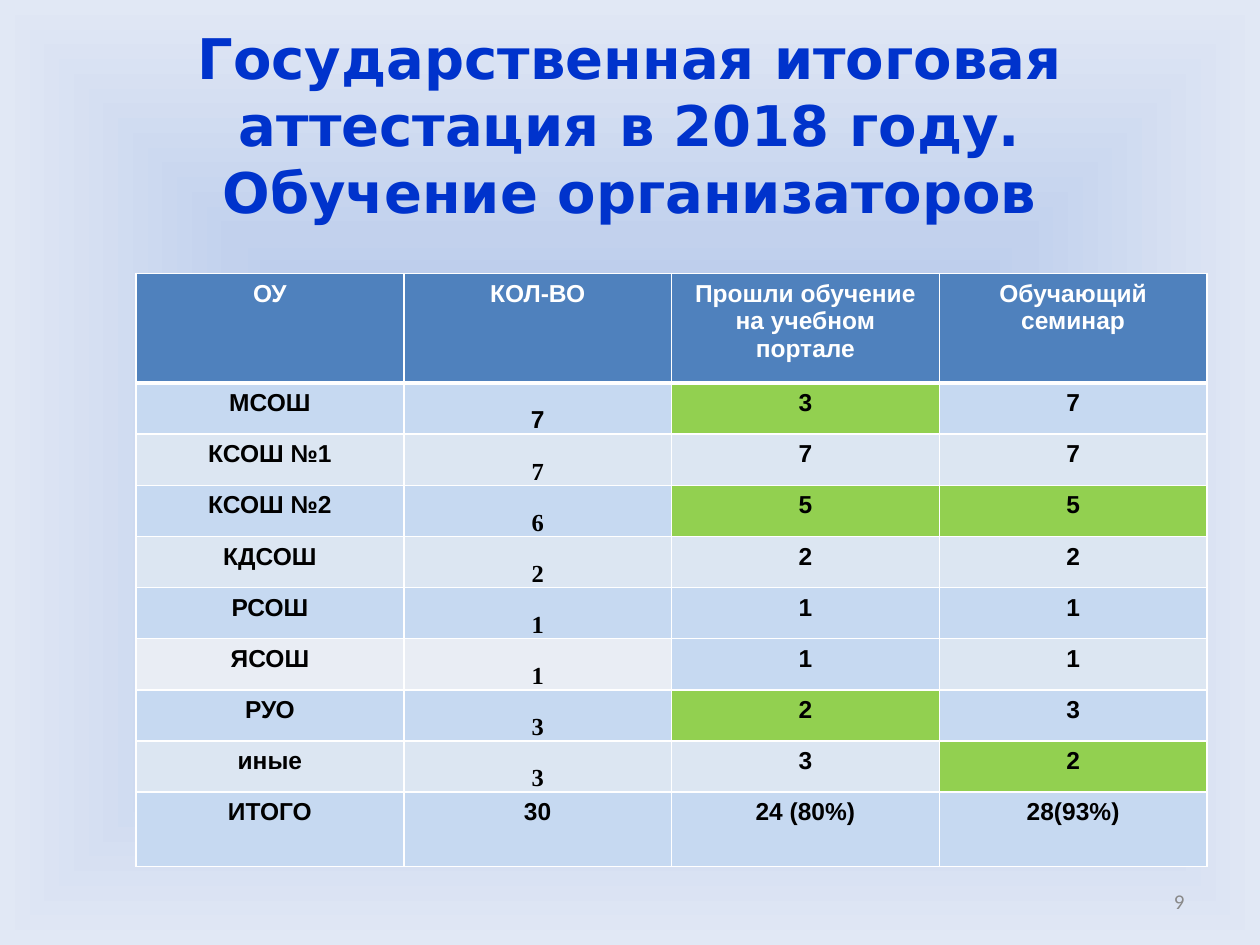
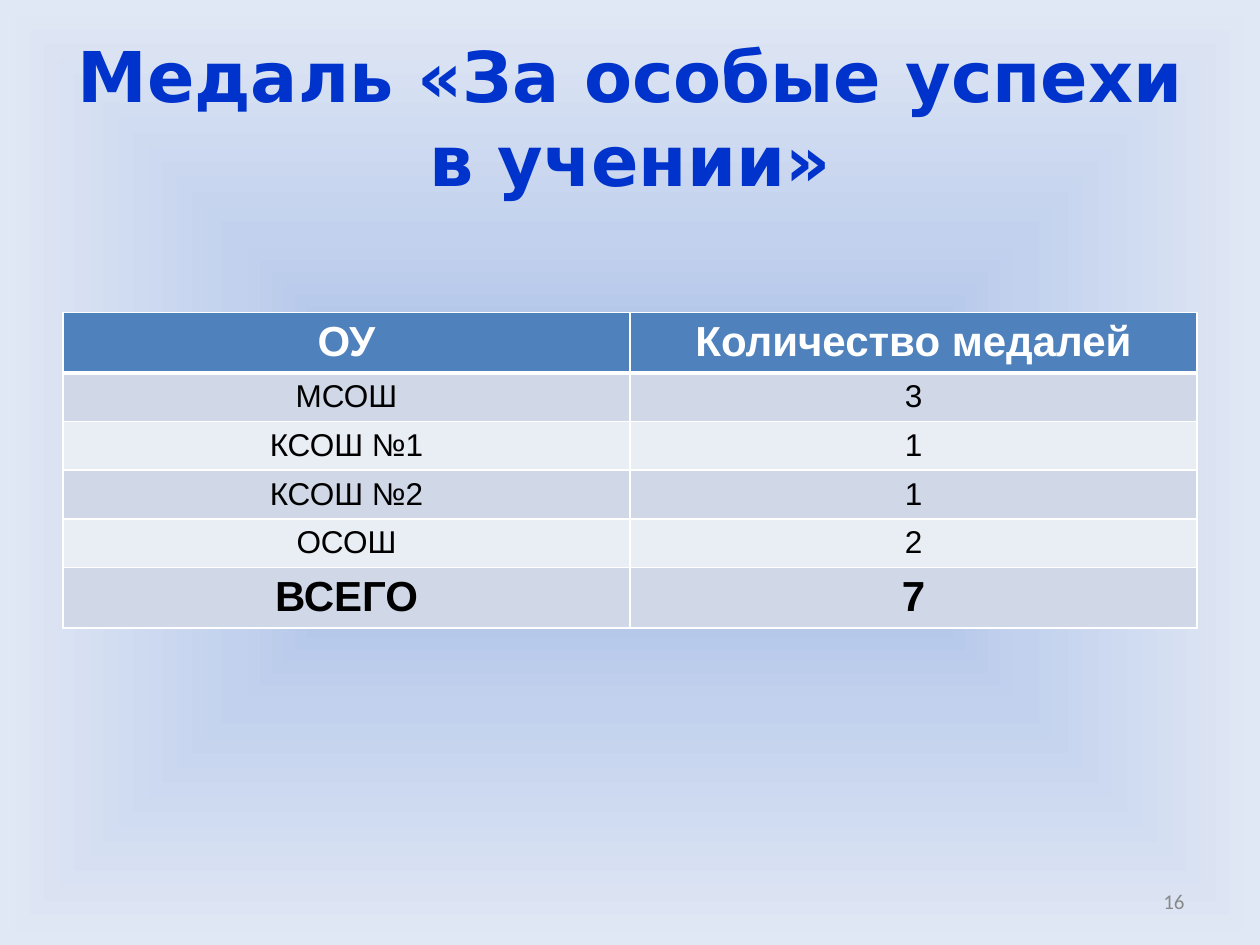
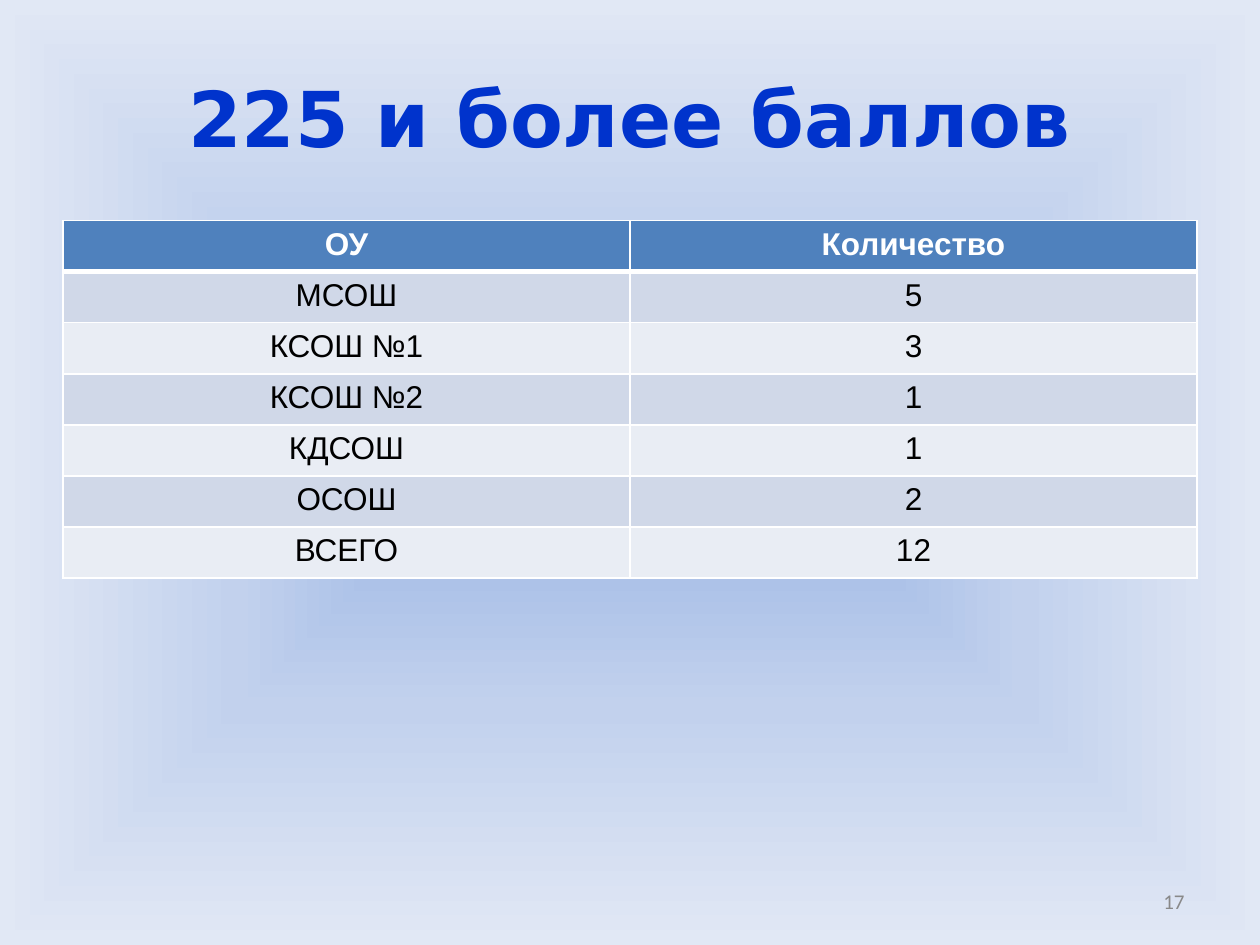
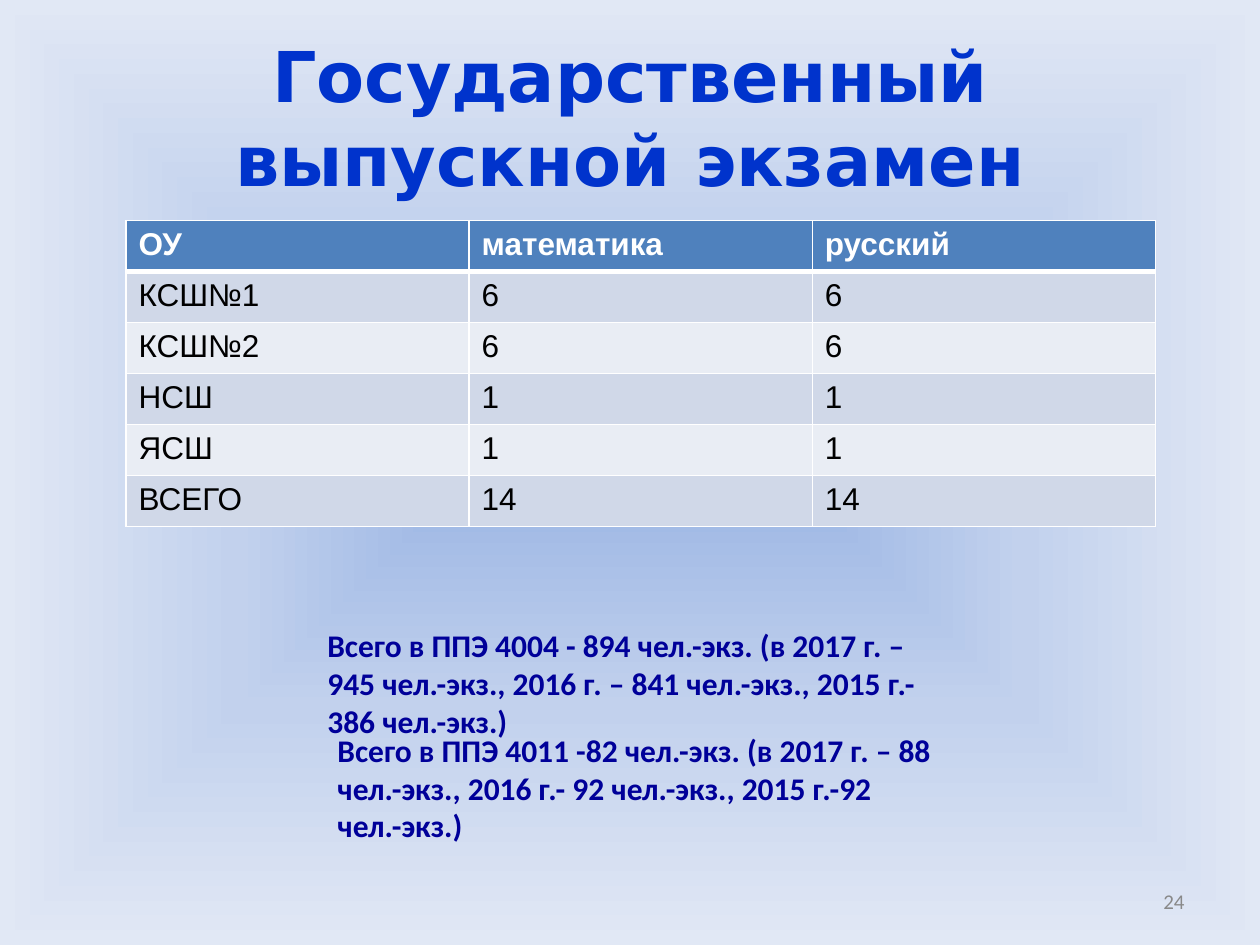
from lxml import etree
from pptx import Presentation
from pptx.dml.color import RGBColor
from pptx.enum.text import MSO_ANCHOR, MSO_AUTO_SIZE, PP_ALIGN
from pptx.oxml import parse_xml
from pptx.oxml.ns import qn
from pptx.util import Inches, Pt

LEFT, CENTER, RIGHT = PP_ALIGN.LEFT, PP_ALIGN.CENTER, PP_ALIGN.RIGHT
TOP, MIDDLE, BOTTOM = MSO_ANCHOR.TOP, MSO_ANCHOR.MIDDLE, MSO_ANCHOR.BOTTOM
NO_FIT, GROW = MSO_AUTO_SIZE.NONE, MSO_AUTO_SIZE.SHAPE_TO_FIT_TEXT

TITLE_BLUE = RGBColor(0x00, 0x33, 0xCC)
NOTE_BLUE = RGBColor(0x00, 0x00, 0x99)
HEADER_BLUE = RGBColor(0x4F, 0x81, 0xBD)
BAND_DARK = RGBColor(0xD0, 0xD8, 0xE8)
BAND_LIGHT = RGBColor(0xE9, 0xED, 0xF4)
SKY_DARK = RGBColor(0xC6, 0xD9, 0xF1)
SKY_LIGHT = RGBColor(0xDC, 0xE6, 0xF2)
GREEN = RGBColor(0x92, 0xD0, 0x50)
GRAY = RGBColor(0x89, 0x89, 0x89)
WHITE = RGBColor(0xFF, 0xFF, 0xFF)
BLACK = RGBColor(0x00, 0x00, 0x00)
GLOW_STOPS = (
    (0, RGBColor(0x9A, 0xB5, 0xE4)),
    (50, RGBColor(0xC2, 0xD1, 0xED)),
    (100, RGBColor(0xE1, 0xE8, 0xF5)),
)

TITLE_FONT, TABLE_FONT, BODY_FONT = "DejaVu Sans", "Arial", "Calibri"
COUNT_FONT = "Times New Roman"
TITLE_ONLY = 5
TITLE_BOX = (0.5, 0.3, 9, 1.25)
NUMBER_BOX = (7.17, 6.95, 2.33, 0.4)
DRAWING_NS = "http://schemas.openxmlformats.org/drawingml/2006/main"


def paint_background(master):
    master.background.fill.gradient()
    plain = next(master.element.iter(qn("a:gradFill")))
    stops = "".join(
        f'<a:gs pos="{percent * 1000}"><a:srgbClr val="{color}"/></a:gs>'
        for percent, color in GLOW_STOPS
    )
    glow = parse_xml(
        f'<a:gradFill xmlns:a="{DRAWING_NS}" rotWithShape="1"><a:gsLst>{stops}</a:gsLst>'
        '<a:path path="shape"><a:fillToRect l="50000" t="50000" r="50000" b="50000"/>'
        "</a:path></a:gradFill>"
    )
    plain.getparent().replace(plain, glow)


def write(frame, text, size, color, font, bold=False, align=LEFT):
    frame.text = text
    paragraph = frame.paragraphs[0]
    paragraph.alignment = align
    for run in paragraph.runs:
        run.font.name = font
        run.font.size = Pt(size)
        run.font.bold = bold
        run.font.color.rgb = color


def add_text(slide, box, text, size, color, bold=False, align=LEFT, anchor=TOP, fit=NO_FIT):
    frame = slide.shapes.add_textbox(*map(Inches, box)).text_frame
    frame.word_wrap = True
    frame.auto_size = fit
    frame.vertical_anchor = anchor
    write(frame, text, size, color, BODY_FONT, bold, align)


def add_titled_slide(deck, title_text, title_size, number, title_box=TITLE_BOX):
    slide = deck.slides.add_slide(deck.slide_layouts[TITLE_ONLY])
    title = slide.shapes.title
    title.left, title.top, title.width, title.height = map(Inches, title_box)
    frame = title.text_frame
    frame.word_wrap = True
    frame.auto_size = NO_FIT
    frame.vertical_anchor = MIDDLE
    write(frame, title_text, title_size, TITLE_BLUE, TITLE_FONT, True, CENTER)
    add_text(slide, NUMBER_BOX, number, 12, GRAY, align=RIGHT, anchor=MIDDLE)
    return slide


def draw_borders(cell, top, bottom):
    properties = cell._tc.get_or_add_tcPr()
    for side, width in (("L", 1), ("R", 1), ("T", top), ("B", bottom)):
        line = etree.SubElement(properties, qn(f"a:ln{side}"), w=str(Pt(width)))
        fill = etree.SubElement(line, qn("a:solidFill"))
        etree.SubElement(fill, qn("a:srgbClr"), val=str(WHITE))


def add_school_table(slide, box, heights, rows, size=18, header_size=18, bold=False,
                     align=CENTER, bands=(BAND_DARK, BAND_LIGHT)):
    left, top, width, _ = box
    columns = len(rows[0])
    table = slide.shapes.add_table(len(rows), columns, *map(Inches, box)).table
    table.horz_banding = False
    for column in table.columns:
        column.width = Inches(width / columns)
    for index, (row, height, texts) in enumerate(zip(table.rows, heights, rows)):
        row.height = Inches(height)
        header = index == 0
        for cell, text in zip(row.cells, texts):
            draw_borders(cell, 3 if index == 1 else 1, 3 if header else 1)
            cell.fill.solid()
            cell.fill.fore_color.rgb = HEADER_BLUE if header else bands[(index - 1) % 2]
            write(cell.text_frame, text, header_size if header else size,
                  WHITE if header else BLACK, TABLE_FONT, header or bold, align)
    return table


def build_training(deck):
    slide = add_titled_slide(
        deck, "Государственная итоговая аттестация в 2018 году. Обучение организаторов",
        32, "9", (0.5, 0.3, 9, 1.37))
    rows = (
        ("ОУ", "КОЛ-ВО", "Прошли обучение на учебном портале", "Обучающий семинар"),
        ("МСОШ", "7", "3", "7"),
        ("КСОШ №1", "7", "7", "7"),
        ("КСОШ №2", "6", "5", "5"),
        ("КДСОШ", "2", "2", "2"),
        ("РСОШ", "1", "1", "1"),
        ("ЯСОШ", "1", "1", "1"),
        ("РУО", "3", "2", "3"),
        ("иные", "3", "3", "2"),
        ("ИТОГО", "30", "24 (80%)", "28(93%)"),
    )
    table = add_school_table(
        slide, (1.08, 2.17, 8.5, 4.71), (0.87, *[0.406] * 8, 0.59), rows,
        size=14, header_size=14, bold=True, bands=(SKY_DARK, SKY_LIGHT))
    for row in range(1, 9):
        count = table.cell(row, 1)
        count.vertical_anchor = BOTTOM
        count.margin_left = count.margin_right = Inches(0.08)
        count.margin_top = count.margin_bottom = 0
        if row > 1:
            count.text_frame.paragraphs[0].runs[0].font.name = COUNT_FONT
    highlights = {
        GREEN: ((1, 2), (3, 2), (3, 3), (7, 2), (8, 3)),
        BAND_LIGHT: ((6, 0), (6, 1)),
        SKY_DARK: ((6, 2),),
    }
    for color, places in highlights.items():
        for place in places:
            table.cell(*place).fill.fore_color.rgb = color


def build_medals(deck):
    slide = add_titled_slide(deck, "Медаль «За особые успехи в учении»", 40, "16")
    rows = (
        ("ОУ", "Количество медалей"),
        ("МСОШ", "3"),
        ("КСОШ №1", "1"),
        ("КСОШ №2", "1"),
        ("ОСОШ", "2"),
        ("ВСЕГО", "7"),
    )
    table = add_school_table(
        slide, (0.5, 2.48, 9, 2.5), (0.48, *[0.386] * 4, 0.48), rows, header_size=24)
    for cell, text in zip(table.rows[len(rows) - 1].cells, rows[-1]):
        write(cell.text_frame, text, 24, BLACK, TABLE_FONT, True, CENTER)


def build_high_scores(deck):
    slide = add_titled_slide(deck, "225 и более баллов", 44, "17")
    rows = (
        ("ОУ", "Количество"),
        ("МСОШ", "5"),
        ("КСОШ №1", "3"),
        ("КСОШ №2", "1"),
        ("КДСОШ", "1"),
        ("ОСОШ", "2"),
        ("ВСЕГО", "12"),
    )
    add_school_table(slide, (0.5, 1.75, 9, 2.84), [2.84 / len(rows)] * len(rows), rows)


def build_final_exam(deck):
    slide = add_titled_slide(deck, "Государственный выпускной экзамен", 40, "24")
    rows = (
        ("ОУ", "математика", "русский"),
        ("КСШ№1", "6", "6"),
        ("КСШ№2", "6", "6"),
        ("НСШ", "1", "1"),
        ("ЯСШ", "1", "1"),
        ("ВСЕГО", "14", "14"),
    )
    add_school_table(slide, (1, 1.75, 8.17, 2.43), [2.43 / len(rows)] * len(rows), rows,
                     align=LEFT)
    exam_totals = (
        ((2.5, 4.92, 5, 1.01),
         "Всего в ППЭ 4004 - 894 чел.-экз. (в 2017 г. – 945 чел.-экз., "
         "2016 г. – 841 чел.-экз., 2015 г.- 386 чел.-экз.)"),
        ((2.58, 5.75, 4.92, 1.01),
         "Всего в ППЭ 4011 -82 чел.-экз. (в 2017 г. – 88 чел.-экз., "
         "2016 г.- 92 чел.-экз., 2015 г.-92 чел.-экз.)"),
    )
    for box, text in exam_totals:
        add_text(slide, box, text, 18, NOTE_BLUE, bold=True, fit=GROW)


def main():
    deck = Presentation()
    deck.slide_width, deck.slide_height = Inches(10), Inches(7.5)
    paint_background(deck.slide_master)
    for build in (build_training, build_medals, build_high_scores, build_final_exam):
        build(deck)
    deck.save("out.pptx")


if __name__ == "__main__":
    main()
